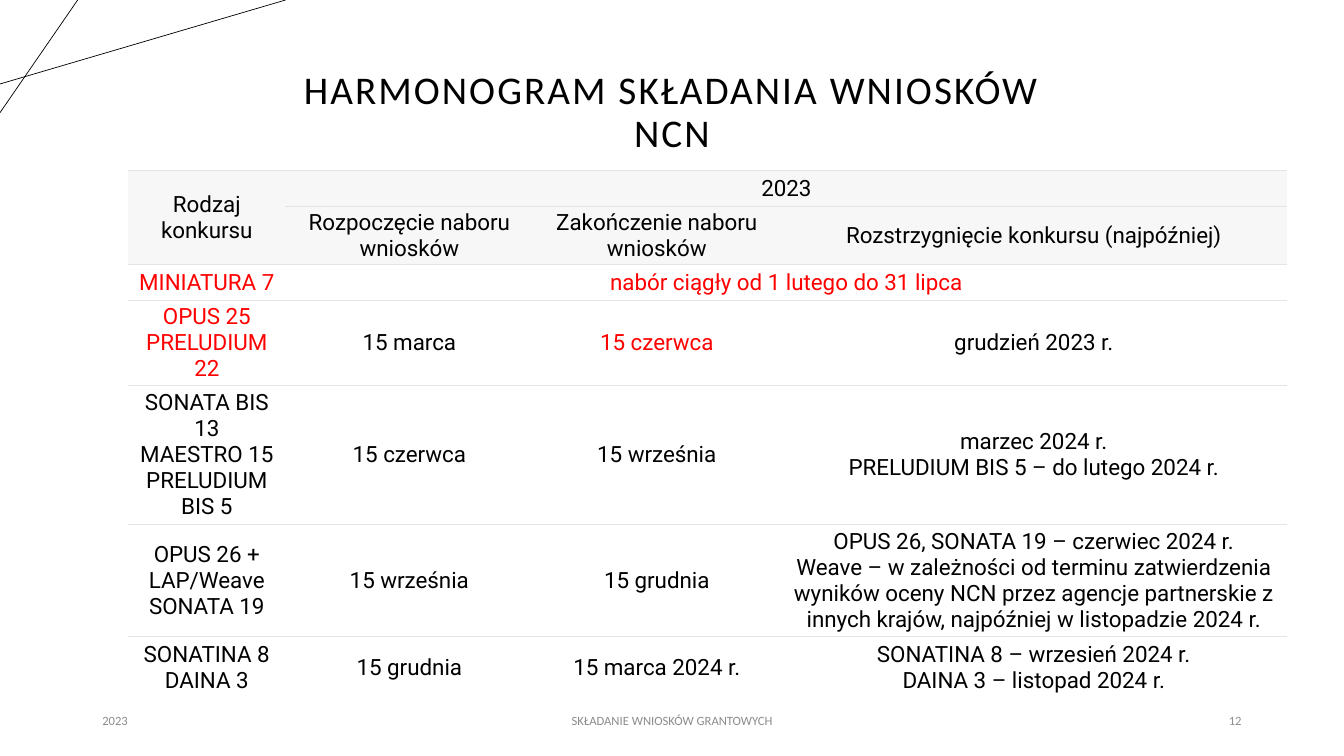
from lxml.etree import SubElement
from pptx import Presentation
from pptx.dml.color import RGBColor
from pptx.enum.shapes import MSO_CONNECTOR as Connector
from pptx.enum.text import MSO_ANCHOR as Anchor, MSO_AUTO_SIZE as AutoSize, PP_ALIGN as Align
from pptx.oxml.ns import qn
from pptx.util import Pt

COLORS = {"black": "000000", "red": "FF0000", "gray": "8C8C8C", "rule": "E4E4E4", "header": "F7F7F7"}
COLUMN_WIDTHS = [112.3, 177.1, 176.4, 362.2]
ROW_HEIGHTS = [25.9, 25.9, 25.9, 44, 62, 80.6, 44]
SCHEDULE = [
    ["Rodzaj konkursu", "2023", None, None],
    [None, "Rozpoczęcie naboru wniosków", "Zakończenie naboru wniosków",
     "Rozstrzygnięcie konkursu (najpóźniej)"],
    ["MINIATURA 7", "nabór ciągły od 1 lutego do 31 lipca", None, None],
    ["OPUS 25\nPRELUDIUM 22", "15 marca", "15 czerwca", "grudzień 2023 r."],
    ["SONATA BIS 13\nMAESTRO 15\nPRELUDIUM BIS 5", "15 czerwca", "15 września",
     "marzec 2024 r.\nPRELUDIUM BIS 5 – do lutego 2024 r."],
    ["OPUS 26 + LAP/Weave\nSONATA 19", "15 września", "15 grudnia",
     "OPUS 26, SONATA 19 – czerwiec 2024 r.\nWeave – w zależności od terminu zatwierdzenia "
     "wyników oceny NCN przez agencje partnerskie z innych krajów, najpóźniej w listopadzie 2024 r."],
    ["SONATINA 8\nDAINA 3", "15 grudnia", "15 marca 2024 r.",
     "SONATINA 8 – wrzesień 2024 r.\nDAINA 3 – listopad 2024 r."],
]
MERGES = [((0, 0), (1, 0)), ((0, 1), (0, 3)), ((2, 1), (2, 3))]
RED_CELLS = {(2, 0), (2, 1), (3, 0), (3, 2)}
HEADER_ROWS = 2


def color(name):
    return RGBColor.from_string(COLORS[name])


def write(frame, text, *, size, font="Calibri", ink="black", align=Align.CENTER,
          line_spacing=None, after=None, tracking=None):
    frame.text = text
    for para in frame.paragraphs:
        para.alignment = align
        para.line_spacing = line_spacing
        para.space_after = after
        for span in para.runs:
            span.font.size = Pt(size)
            span.font.name = font
            span.font.color.rgb = color(ink)
            if tracking:
                span.font._element.set("spc", str(tracking))


def add_title(page, text):
    title = page.shapes.title
    title.left, title.top, title.width, title.height = Pt(66), Pt(28.8), Pt(828), Pt(104.4)
    frame = title.text_frame
    frame.auto_size = AutoSize.NONE
    frame.vertical_anchor = Anchor.MIDDLE
    write(frame, text, size=28, line_spacing=0.9, tracking=150)


def add_footer(page, text, left, width, align):
    box = page.shapes.add_textbox(Pt(left), Pt(500.4), Pt(width), Pt(28.8))
    box.text_frame.word_wrap = True
    box.text_frame.vertical_anchor = Anchor.MIDDLE
    write(box.text_frame, text, size=9, ink="gray", align=align, after=Pt(6))


def add_line(page, *ends):
    line = page.shapes.add_connector(Connector.STRAIGHT, *map(Pt, ends))
    line.line.color.rgb = color("black")
    line.line.width = Pt(0.5)
    SubElement(line._element.spPr, qn("a:effectLst"))


def set_borders(cell, visible):
    properties = cell._tc.get_or_add_tcPr()
    for side in "LRTB":
        border = SubElement(properties, qn(f"a:ln{side}"), w=str(Pt(0.75)))
        if side in visible:
            fill = SubElement(border, qn("a:solidFill"))
            SubElement(fill, qn("a:srgbClr"), val=COLORS["rule"])
        else:
            SubElement(border, qn("a:noFill"))


def format_cell(cell, row, column):
    cell.margin_left = cell.margin_right = Pt(3)
    cell.margin_top = cell.margin_bottom = Pt(1.5)
    cell.vertical_anchor = Anchor.MIDDLE
    set_borders(cell, "T" if row == len(SCHEDULE) - 1 else "TB")
    if row < HEADER_ROWS:
        cell.fill.solid()
        cell.fill.fore_color.rgb = color("header")
    else:
        cell.fill.background()
    text = SCHEDULE[row][column]
    if text:
        ink = "red" if (row, column) in RED_CELLS else "black"
        write(cell.text_frame, text, size=16, font="Roboto", ink=ink)


def add_schedule(page):
    table = page.shapes.add_table(
        len(ROW_HEIGHTS), len(COLUMN_WIDTHS), Pt(91.6), Pt(121.7),
        Pt(sum(COLUMN_WIDTHS)), Pt(sum(ROW_HEIGHTS))).table
    table.first_row = table.horz_banding = False
    for column, width in zip(table.columns, COLUMN_WIDTHS):
        column.width = Pt(width)
    for row, height in zip(table.rows, ROW_HEIGHTS):
        row.height = Pt(height)
    for first, last in MERGES:
        table.cell(*first).merge(table.cell(*last))
    for row in range(len(ROW_HEIGHTS)):
        for column in range(len(COLUMN_WIDTHS)):
            format_cell(table.cell(row, column), row, column)


def main():
    deck = Presentation()
    deck.slide_width, deck.slide_height = Pt(960), Pt(540)
    page = deck.slides.add_slide(deck.slide_layouts[5])
    add_line(page, 0, 60, 204, 0)
    add_line(page, 55.5, 0, 0, 80.5)
    add_title(page, "HARMONOGRAM SKŁADANIA WNIOSKÓW\vNCN")
    add_footer(page, "2023", 66, 216, Align.LEFT)
    add_footer(page, "SKŁADANIE WNIOSKÓW GRANTOWYCH", 318, 324, Align.CENTER)
    add_footer(page, "12", 678, 216, Align.RIGHT)
    add_schedule(page)
    deck.save("out.pptx")


if __name__ == "__main__":
    main()
